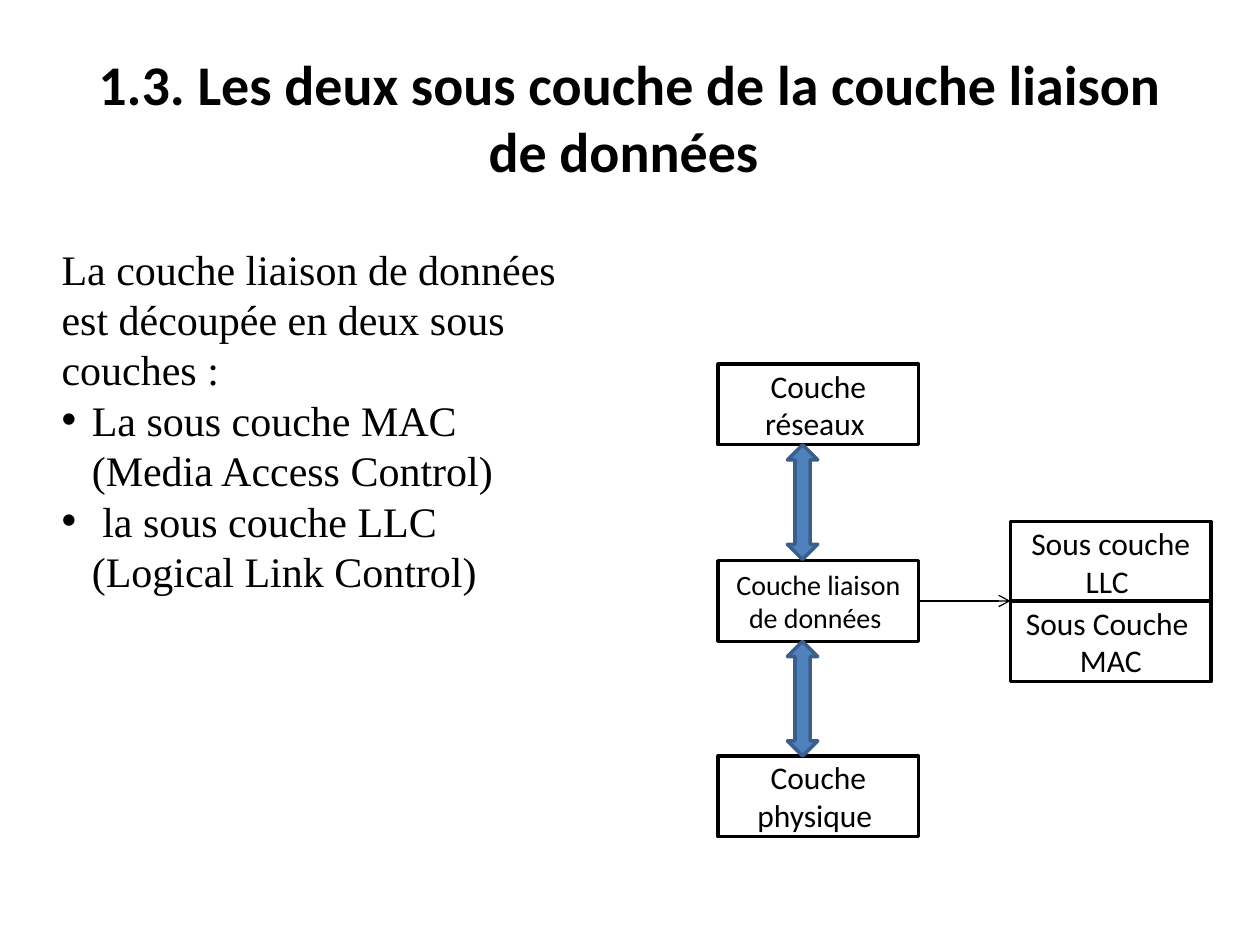
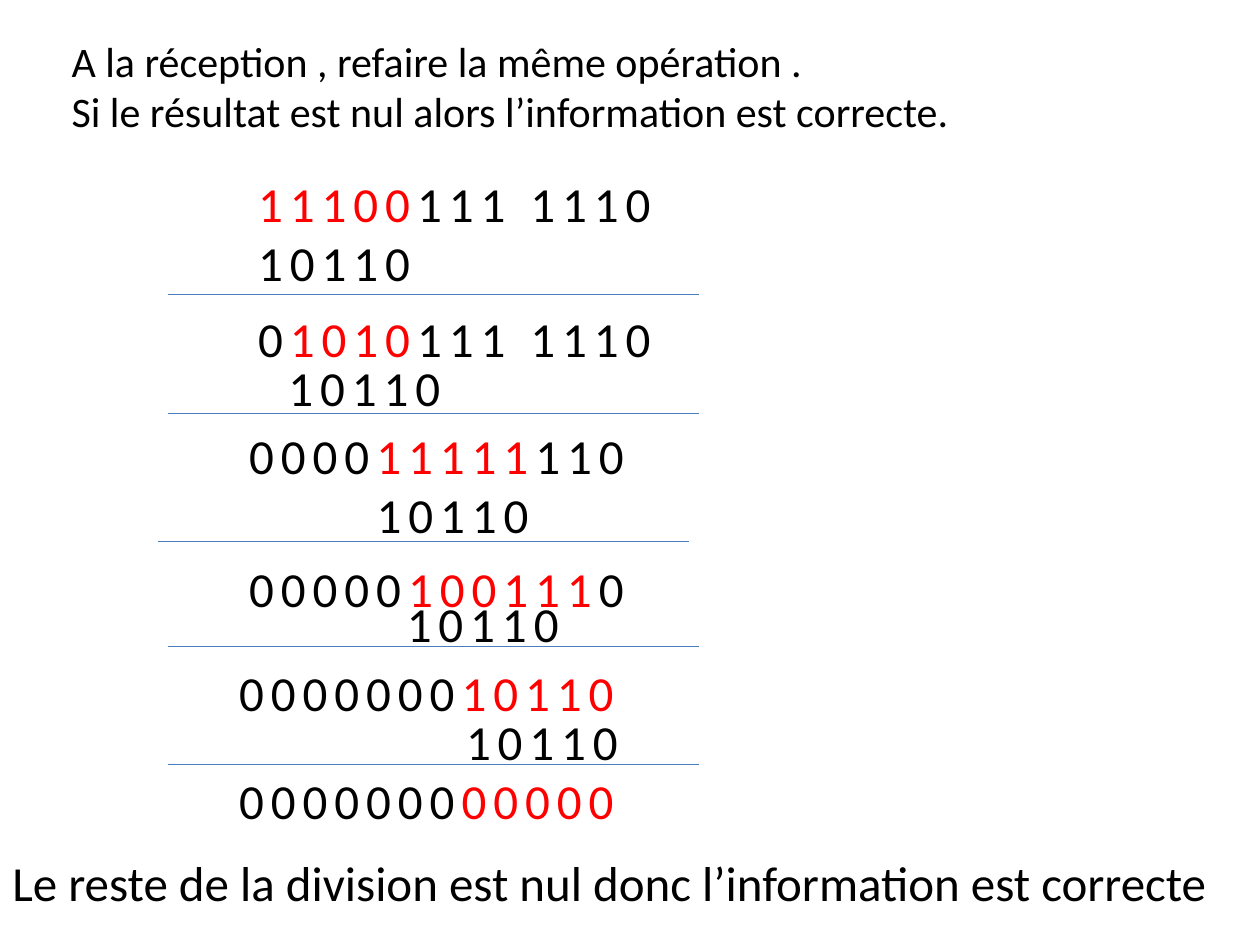
import pptx
import pptx.dml.color
import pptx.enum.shapes
import pptx.enum.text
import pptx.util
from lxml import etree
from pptx.oxml.ns import qn

PX = 9144  # 100 px to the inch
COLOURS = {"text": "000000", "marked": "FF0000", "box": "FFFFFF",
           "arrow": "4F81BD", "arrow edge": "3A5F8C", "rule": "4B7EBC"}
RGB = {key: pptx.dml.color.RGBColor.from_string(value) for key, value in COLOURS.items()}
Pt = pptx.util.Pt
Shape = pptx.enum.shapes.MSO_SHAPE
CENTER = pptx.enum.text.PP_ALIGN.CENTER
MIDDLE = pptx.enum.text.MSO_ANCHOR.MIDDLE

TITLE = {"name": "Calibri", "size": Pt(32), "bold": True}
BODY = {"name": "Times New Roman", "size": Pt(24)}
NOTE = {"name": "Calibri", "size": Pt(24)}
LABEL = {"name": "Calibri", "size": Pt(18)}
SMALL_LABEL = {"name": "Calibri", "size": Pt(16)}
BITS = {"name": "Calibri", "size": Pt(28)}


def write(shape, paragraphs, style, align=None, wrap=True, spacing=None):
    """Fill a shape; each paragraph is a list of (text, colour key) runs."""
    frame = shape.text_frame
    frame.word_wrap = wrap
    if align == CENTER:
        frame.vertical_anchor = MIDDLE
    else:
        frame.auto_size = pptx.enum.text.MSO_AUTO_SIZE.SHAPE_TO_FIT_TEXT
    for index, runs in enumerate(paragraphs):
        paragraph = frame.add_paragraph() if index else frame.paragraphs[0]
        paragraph.alignment = align
        for text, colour in runs:
            run = paragraph.add_run()
            run.text = text
            for attribute, value in style.items():
                setattr(run.font, attribute, value)
            run.font.color.rgb = RGB[colour]
            if spacing:
                run.font._element.set("spc", str(spacing))
    return frame


def draw_line(slide, left, right, y, colour):
    line = slide.shapes.add_connector(pptx.enum.shapes.MSO_CONNECTOR.STRAIGHT,
                                      left * PX, y * PX, right * PX, y * PX)
    line.line.color.rgb = RGB[colour]
    line.line.width = Pt(0.75)
    etree.SubElement(line._element.spPr, qn("a:effectLst"))
    return line


deck = pptx.Presentation()
deck.slide_width, deck.slide_height = 1000 * PX, 750 * PX
blank = deck.slide_layouts[6]

# Slide 1: the two sublayers
layers = deck.slides.add_slide(blank)
title = layers.shapes.add_textbox(50 * PX, 30 * PX, 900 * PX, 125 * PX)
write(title, [[("1.3. Les deux sous couche de la couche liaison de données ", "text")]],
      TITLE, CENTER)

BOX_W, BOX_H = 159, 64
for left, top, lines, style in [
    (570, 600, ["Couche physique "], LABEL),
    (570, 445, ["Couche liaison de données "], SMALL_LABEL),
    (570, 289, ["Couche réseaux "], LABEL),
    (802, 414, ["Sous couche LLC "], LABEL),
    (802, 477, ["Sous Couche ", "MAC"], LABEL),
]:
    layer = layers.shapes.add_shape(Shape.RECTANGLE, left * PX, top * PX, BOX_W * PX, BOX_H * PX)
    layer.shadow.inherit = False
    layer.fill.solid()
    layer.fill.fore_color.rgb = RGB["box"]
    layer.line.color.rgb = RGB["text"]
    layer.line.width = Pt(2)
    write(layer, [[(line, "text")] for line in lines], style, CENTER)

for top in (353, 509):
    exchange = layers.shapes.add_shape(Shape.UP_DOWN_ARROW, 625 * PX, top * PX, 24 * PX, 91 * PX)
    exchange.shadow.inherit = False
    exchange.fill.solid()
    exchange.fill.fore_color.rgb = RGB["arrow"]
    exchange.line.color.rgb = RGB["arrow edge"]
    exchange.line.width = Pt(2)

split = draw_line(layers, 570 + BOX_W, 802, 477, "text")
etree.SubElement(split.line._get_or_add_ln(), qn("a:tailEnd"), type="arrow")

summary = layers.shapes.add_textbox(39 * PX, 188 * PX, 438 * PX, 333 * PX)
summary_frame = write(summary, [
    [("La couche liaison de données est découpée en deux sous couches :", "text")],
    [("La sous couche MAC (Media Access Control)", "text")],
    [(" la sous couche LLC (Logical Link Control)", "text")],
], BODY)
for sublayer in summary_frame.paragraphs[1:]:
    properties = sublayer._p.get_or_add_pPr()
    properties.set("marL", str(24 * PX))
    properties.set("indent", str(-24 * PX))
    etree.SubElement(properties, qn("a:buFont"), typeface="Arial")
    etree.SubElement(properties, qn("a:buChar"), char="•")

# Slide 2: division at reception
division = deck.slides.add_slide(blank)
for left, top, width, height, lines, style in [
    (47, 23, 730, 91, ["A la réception , refaire la même opération .",
                       "Si le résultat est nul alors l’information est correcte."], NOTE),
    (0, 672, 970, 57, ["Le reste de la division est nul donc l’information est correcte"], BITS),
]:
    remark = division.shapes.add_textbox(left * PX, top * PX, width * PX, height * PX)
    write(remark, [[(line, "text")] for line in lines], style, wrap=False)

# Dividend left and top, its plain, marked and plain bits
for left, top, before, marked, after in [
    (195, 133, "", "11100", "111 1110"),
    (195, 240, "0", "1010", "111 1110"),
    (188, 333, "0000", "11111", "110"),
    (188, 438, "00000", "100111", "0"),
    (180, 521, "0000000", "10110", ""),
    (180, 607, "0000000", "00000", ""),
]:
    dividend = division.shapes.add_textbox(left * PX, top * PX, 453 * PX, 57 * PX)
    parts = [(before, "text"), (marked, "marked"), (after, "text")]
    write(dividend, [[part for part in parts if part[0]]], BITS, spacing=400)

# Divisor left and top, then the rule below it
for left, top, rule_left, rule_y in [
    (195, 180, 133, 234),
    (219, 279, 133, 328),
    (289, 380, 125, 430),
    (313, 466, 133, 513),
    (360, 560, 133, 607),
]:
    divisor = division.shapes.add_textbox(left * PX, top * PX, 148 * PX, 57 * PX)
    write(divisor, [[("10110", "text")]], BITS, wrap=False, spacing=400)
    draw_line(division, rule_left, rule_left + 422, rule_y, "rule")

deck.save("out.pptx")
